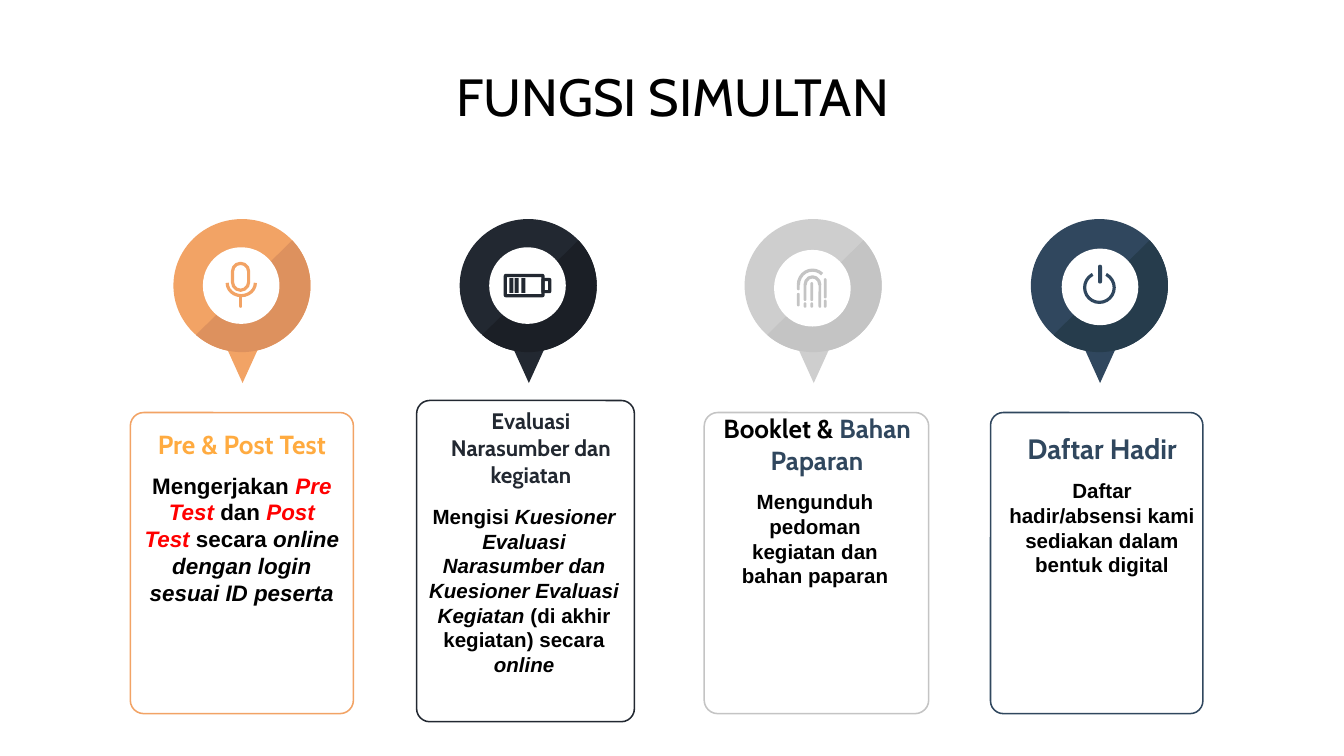
from pptx import Presentation
from pptx.dml.color import RGBColor
from pptx.enum.shapes import MSO_SHAPE as Shape
from pptx.enum.text import MSO_ANCHOR as Anchor, PP_ALIGN as Align
from pptx.util import Inches, Pt

ORANGE = RGBColor(0xF2, 0xA3, 0x65)
ORANGE_SHADE = RGBColor(0xDD, 0x91, 0x5E)
AMBER = RGBColor(0xFF, 0xAB, 0x40)
INK = RGBColor(0x22, 0x28, 0x31)
INK_SHADE = RGBColor(0x1B, 0x1F, 0x26)
SILVER = RGBColor(0xCE, 0xCE, 0xCE)
GRAY = RGBColor(0xC4, 0xC4, 0xC4)
NAVY = RGBColor(0x30, 0x47, 0x5E)
NAVY_SHADE = RGBColor(0x26, 0x3C, 0x4C)
RED = RGBColor(0xFF, 0x00, 0x00)
BLACK = RGBColor(0x00, 0x00, 0x00)
WHITE = RGBColor(0xFF, 0xFF, 0xFF)

deck = Presentation()
deck.slide_width = Inches(10)
deck.slide_height = Inches(10 * 9 / 16)
page = deck.slides.add_slide(deck.slide_layouts[6])


def add_preset(kind, bounds, fill=None, line=None, width=1.7, corner=None, angles=None):
    """Draw a preset shape; angles are start and end in degrees, clockwise from the right."""
    shape = page.shapes.add_shape(kind, *[Inches(value) for value in bounds])
    shape.shadow.inherit = False
    if fill is None:
        shape.fill.background()
    else:
        shape.fill.solid()
        shape.fill.fore_color.rgb = fill
    if line is None:
        shape.line.fill.background()
    else:
        shape.line.color.rgb = line
        shape.line.width = Pt(width)
    if corner is not None:
        shape.adjustments[0] = corner
    for index, angle in enumerate(angles or ()):
        shape.adjustments[index] = angle * 0.6  # 60000 units a degree, scaled by 100000


def add_text(bounds, runs, size, font="Cabin", bold=True, anchor=Anchor.MIDDLE, after=0):
    """Add one centred paragraph; each run is (text, colour, italic)."""
    box = page.shapes.add_textbox(*[Inches(value) for value in bounds])
    frame = box.text_frame
    frame.word_wrap = True
    frame.vertical_anchor = anchor
    frame.margin_left = frame.margin_right = Inches(0.1)
    frame.margin_top = frame.margin_bottom = Inches(0.1)
    para = frame.paragraphs[0]
    para.alignment = Align.CENTER
    para.space_after = Pt(after)
    for text, color, italic in runs:
        span = para.add_run()
        span.text = text
        span.font.name = font
        span.font.size = Pt(size)
        span.font.bold = bold
        span.font.italic = italic
        span.font.color.rgb = color


# Card frames
for bounds, color in [
    ((0.97, 3.07, 1.66, 2.24), ORANGE),
    ((3.1, 2.98, 1.62, 2.39), INK),
    ((5.24, 3.07, 1.67, 2.24), GRAY),
    ((7.37, 3.07, 1.58, 2.24), NAVY),
]:
    add_preset(Shape.ROUNDED_RECTANGLE, bounds, line=color, width=0.81, corner=0.06)

# Pins: tip, head, shaded half and white hole
for center, hole_left, hole_top, color, shade in [
    (1.8, 1.51, 1.84, ORANGE, ORANGE_SHADE),
    (3.93, 3.64, 1.84, INK, INK_SHADE),
    (6.05, 5.76, 1.86, SILVER, GRAY),
    (8.18, 7.9, 1.85, NAVY, NAVY_SHADE),
]:
    head = (center - 0.51, 1.63, 1.02, 0.99)
    add_preset(Shape.FLOWCHART_MERGE, (center - 0.14, 2.53, 0.29, 0.32), color)
    add_preset(Shape.OVAL, head, color)
    add_preset(Shape.CHORD, head, shade, angles=(318, 133))
    add_preset(Shape.OVAL, (hole_left, hole_top, 0.57, 0.57), WHITE)

# Curved icon strokes: microphone cradle, fingerprint ridges, power ring
for bounds, color, angles in [
    ((1.69, 2.01, 0.21, 0.19), ORANGE, (0, 180)),
    ((5.94, 2.01, 0.21, 0.22), GRAY, (180, 312)),
    ((5.99, 2.06, 0.11, 0.12), GRAY, (180, 0)),
    ((8.07, 2.03, 0.22, 0.22), NAVY, (297, 243)),
]:
    add_preset(Shape.ARC, bounds, line=color, angles=angles)

# Outlined icon parts: microphone capsule, battery body and terminal
for bounds, color, corner in [
    ((1.73, 1.96, 0.12, 0.2), ORANGE, 0.5),
    ((3.76, 2.05, 0.28, 0.15), INK, 0.02),
    ((4.04, 2.08, 0.05, 0.09), INK, 0.02),
]:
    add_preset(Shape.ROUNDED_RECTANGLE, bounds, line=color, corner=corner)

# Straight icon strokes as (left, top, height)
for color, width, corner, bars in [
    (ORANGE, 0.02, 0.5, [(1.78, 2.2, 0.09)]),
    (INK, 0.03, 0, [(3.79, 2.07, 0.11), (3.83, 2.07, 0.11), (3.88, 2.07, 0.11)]),
    (GRAY, 0.02, 0.5, [
        (5.93, 2.11, 0.05), (5.93, 2.18, 0.1), (5.98, 2.11, 0.13), (5.98, 2.25, 0.04),
        (6.03, 2.1, 0.14), (6.03, 2.25, 0.04), (6.09, 2.11, 0.18),
        (6.13, 2.07, 0.15), (6.13, 2.23, 0.06),
    ]),
    (NAVY, 0.03, 0.5, [(8.17, 1.97, 0.14)]),
]:
    for left, top, height in bars:
        add_preset(Shape.ROUNDED_RECTANGLE, (left, top, width, height), color, corner=corner)

# Card headings
for bounds, size, runs in [
    ((0.97, 3.04, 1.66, 0.53), 14, [("Pre & Post Test", AMBER, False)]),
    ((3.14, 2.98, 1.62, 0.7), 12, [("Evaluasi Narasumber dan kegiatan", INK, False)]),
    ((5.25, 3.04, 1.66, 0.53), 14, [("Booklet & ", BLACK, False), ("Bahan Paparan", NAVY, False)]),
    ((7.37, 3.07, 1.66, 0.53), 15, [("Daftar Hadir", NAVY, False)]),
]:
    add_text(bounds, runs, size)

# Card descriptions
for bounds, size, runs in [
    ((0.97, 3.41, 1.66, 1.75), 12, [
        ("Mengerjakan ", BLACK, False),
        ("Pre Test ", RED, True),
        ("dan ", BLACK, False),
        ("Post Test", RED, True),
        (" secara ", BLACK, False),
        ("online dengan login sesuai ID peserta", BLACK, True),
    ]),
    ((3.07, 3.65, 1.66, 1.82), 11, [
        ("Mengisi ", BLACK, False),
        ("Kuesioner Evaluasi Narasumber dan Kuesioner Evaluasi Kegiatan ", BLACK, True),
        ("(di akhir kegiatan) secara ", BLACK, False),
        ("online", BLACK, True),
    ]),
    ((5.33, 3.54, 1.47, 1.77), 11, [
        ("Mengunduh pedoman kegiatan dan bahan paparan", BLACK, False),
    ]),
    ((7.37, 3.46, 1.66, 1.05), 11, [
        ("Daftar hadir/absensi kami sediakan dalam bentuk digital", BLACK, False),
    ]),
]:
    add_text(bounds, runs, size, font="Arial", anchor=Anchor.TOP, after=5)

add_text((0.78, 0.45, 8.45, 0.53), [("FUNGSI SIMULTAN", BLACK, False)], 28, bold=False)

deck.save("out.pptx")
